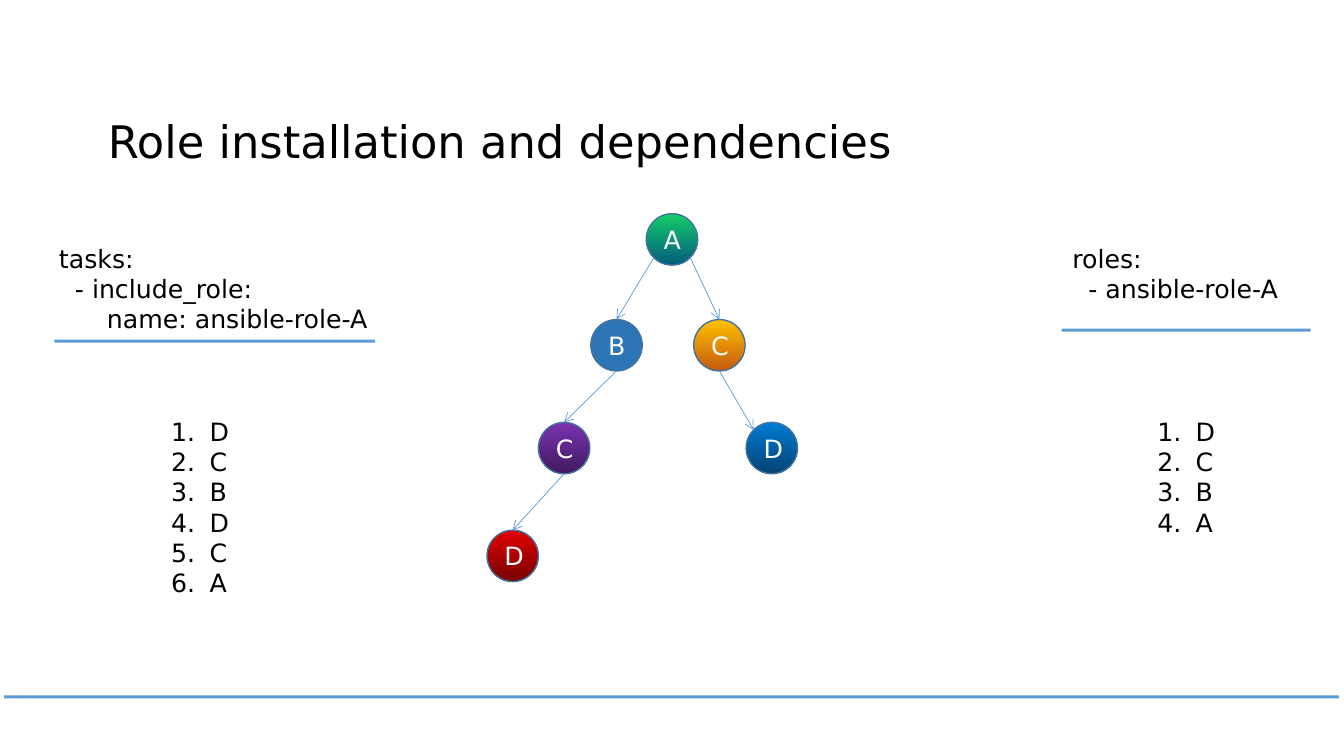
from math import cos, radians, sin

from lxml import etree
from pptx import Presentation
from pptx.dml.color import RGBColor
from pptx.enum.shapes import MSO_CONNECTOR, MSO_SHAPE
from pptx.enum.text import MSO_ANCHOR, MSO_AUTO_SIZE, PP_ALIGN
from pptx.oxml.ns import qn
from pptx.util import Inches, Pt

STRAIGHT = MSO_CONNECTOR.STRAIGHT
RECTANGLE, OVAL = MSO_SHAPE.RECTANGLE, MSO_SHAPE.OVAL
MIDDLE, CENTER = MSO_ANCHOR.MIDDLE, PP_ALIGN.CENTER
FIT_SHAPE = MSO_AUTO_SIZE.SHAPE_TO_FIT_TEXT

THEME = {
    "font": "DejaVu Sans",
    "title": 32,
    "body": 18,
    "ink": "000000",
    "node_text": "FFFFFF",
    "node_line": "43739E",
    "accent": "5B9BD5",
}

TITLE = "Role installation and dependencies"
ROLES = {
    "A": ("A", 6.41, 2.12, ["14CD68", "035C7D"]),
    "B": ("B", 5.86, 3.17, ["2E75B6"]),
    "C right": ("C", 6.88, 3.17, ["FFC000", "C55A11"]),
    "C left": ("C", 5.34, 4.19, ["7B32B2", "401A5D"]),
    "D right": ("D", 7.4, 4.19, ["007BD3", "034373"]),
    "D left": ("D", 4.83, 5.26, ["E30000", "760303"]),
}
DEPENDENCIES = [
    ("A", "bottom left", "B", "top"),
    ("B", "bottom", "C left", "top"),
    ("C left", "bottom", "D left", "top"),
    ("A", "bottom right", "C right", "top"),
    ("C right", "bottom", "D right", "top left"),
]
SNIPPETS = [
    (0.17, 2.36, 3.64, 1.01,
     ["    tasks:", "      - include_role:", "          name: ansible-role-A"]),
    (10.3, 2.36, 2.78, 0.71, ["   roles:", "     - ansible-role-A"]),
]
INSTALL_ORDERS = [(1.6, 4.08, 0.77, 1.92, "DCBDCA"), (11.38, 4.08, 0.77, 1.31, "DCBA")]
RULES = [(0.04, 6.9, 13.24), (0.54, 3.37, 3.18), (10.53, 3.26, 2.47)]

RULE_HEIGHT = 0.03
NODE_SIZE = 0.51
LIST_INDENT = 0.38
SITE_ANGLES = {"top": -90, "top left": -135, "bottom": 90, "bottom left": 135, "bottom right": 45}


def color(name):
    return RGBColor.from_string(THEME.get(name, name))


def set_font(paragraph, size, ink):
    paragraph.font.name = THEME["font"]
    paragraph.font.size = Pt(THEME[size])
    paragraph.font.color.rgb = color(ink)


def add_text(slide, box, lines, size="body", wrap=True, numbered=False):
    frame = slide.shapes.add_textbox(*map(Inches, box)).text_frame
    frame.word_wrap = wrap
    frame.text = "\n".join(lines)
    for paragraph in frame.paragraphs:
        if numbered:
            properties = paragraph._p.get_or_add_pPr()
            properties.set("marL", str(Inches(LIST_INDENT)))
            properties.set("indent", str(-Inches(LIST_INDENT)))
            etree.SubElement(properties, qn("a:buAutoNum"), type="arabicPeriod")
        set_font(paragraph, size, "ink")
    return frame


def add_title(slide):
    frame = add_text(slide, (1.07, 0.84, 8.64, 1.15), [TITLE], "title")
    frame.margin_left = frame.margin_top = frame.margin_right = frame.margin_bottom = 0
    frame.vertical_anchor = MIDDLE
    frame.paragraphs[0].line_spacing = 0.96


def add_rule(slide, left, top, width):
    rule = slide.shapes.add_shape(RECTANGLE, *map(Inches, (left, top, width, RULE_HEIGHT)))
    rule.shadow.inherit = False
    rule.fill.solid()
    rule.fill.fore_color.rgb = color("accent")
    rule.line.fill.background()


def add_role(slide, label, left, top, shades):
    node = slide.shapes.add_shape(OVAL, *map(Inches, (left, top, NODE_SIZE, NODE_SIZE)))
    node.shadow.inherit = False
    if len(shades) == 1:
        node.fill.solid()
        node.fill.fore_color.rgb = color(shades[0])
    else:
        node.fill.gradient()
        node.fill.gradient_angle = 270
        for stop, shade in zip(node.fill.gradient_stops, shades):
            stop.color.rgb = color(shade)
    node.line.color.rgb = color("node_line")
    node.line.width = Pt(1)
    frame = node.text_frame
    frame.text = label
    frame.vertical_anchor = MIDDLE
    frame.paragraphs[0].alignment = CENTER
    set_font(frame.paragraphs[0], "body", "node_text")
    return node


def site_point(node, site):
    angle = radians(SITE_ANGLES[site])
    radius = node.width / 2
    return (round(node.left + radius + radius * cos(angle)),
            round(node.top + radius + radius * sin(angle)))


def add_dependency(slide, parent, start, child, end):
    arrow = slide.shapes.add_connector(STRAIGHT, *site_point(parent, start), *site_point(child, end))
    if end == "top":
        arrow.end_connect(child, 0)
    arrow.line.color.rgb = color("accent")
    arrow.line.width = Pt(0.5)
    etree.SubElement(arrow.line._get_or_add_ln(), qn("a:tailEnd"), type="arrow")
    etree.SubElement(arrow._element.spPr, qn("a:effectLst"))


def main():
    presentation = Presentation()
    presentation.slide_width, presentation.slide_height = Inches(13.33), Inches(7.5)
    slide = presentation.slides.add_slide(presentation.slide_layouts[6])
    add_title(slide)
    for rule in RULES:
        add_rule(slide, *rule)
    nodes = {name: add_role(slide, *role) for name, role in ROLES.items()}
    for parent, start, child, end in DEPENDENCIES:
        add_dependency(slide, nodes[parent], start, nodes[child], end)
    for *box, lines in SNIPPETS:
        add_text(slide, box, lines).auto_size = FIT_SHAPE
    for *box, order in INSTALL_ORDERS:
        add_text(slide, box, order, wrap=False, numbered=True).auto_size = FIT_SHAPE
    presentation.save("out.pptx")


if __name__ == "__main__":
    main()
